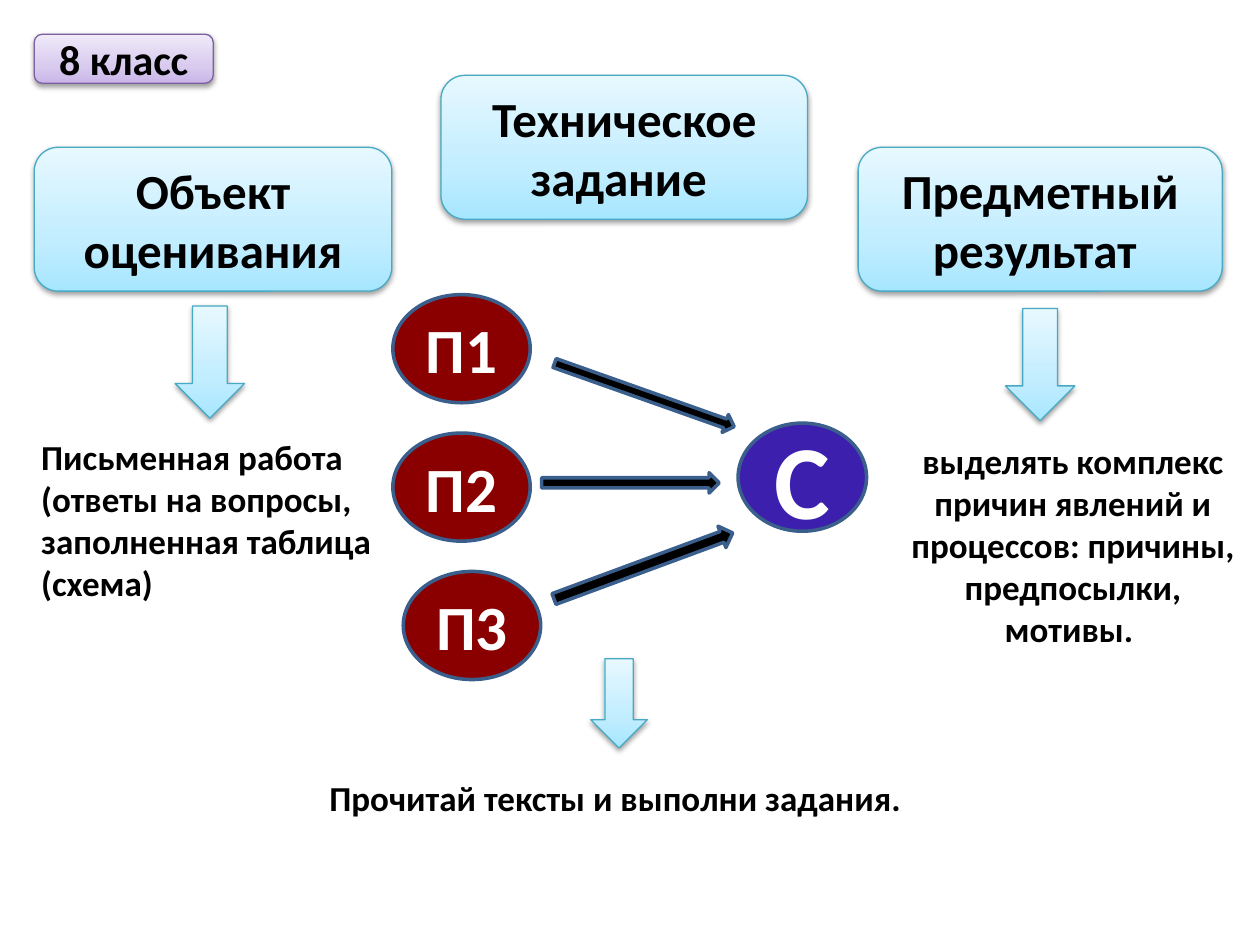
"""Build the slide with the 8th grade assignment scheme."""
from copy import deepcopy

from lxml.etree import SubElement
from pptx import Presentation
from pptx.dml.color import RGBColor
from pptx.enum.shapes import MSO_SHAPE
from pptx.enum.text import MSO_ANCHOR, PP_ALIGN
from pptx.oxml.ns import qn
from pptx.util import Cm, Pt

BLACK = RGBColor(0x00, 0x00, 0x00)
WHITE = RGBColor(0xFF, 0xFF, 0xFF)
DARK_RED = RGBColor(0x8A, 0x00, 0x00)
INDIGO = RGBColor(0x3D, 0x1F, 0xAD)
STEEL = RGBColor(0x3A, 0x5F, 0x8C)
AQUA_LINE = RGBColor(0x46, 0xAA, 0xC5)
PURPLE_LINE = RGBColor(0x7D, 0x60, 0xA0)
AQUA = [RGBColor(0xA7, 0xE6, 0xFF), RGBColor(0xC1, 0xED, 0xFF), RGBColor(0xE7, 0xF8, 0xFF)]
PURPLE = [RGBColor(0xC9, 0xB5, 0xE8), RGBColor(0xD8, 0xCB, 0xEE), RGBColor(0xF0, 0xEA, 0xF9)]
STOPS = (0, 0.35, 1)

HEADINGS = [
    ("Объект оценивания", (0.69, 2.97, 7.21, 2.9), 28, AQUA, AQUA_LINE),
    ("Техническое задание ", (8.89, 1.52, 7.39, 2.9), 28, AQUA, AQUA_LINE),
    ("Предметный результат ", (17.3, 2.97, 7.34, 2.9), 28, AQUA, AQUA_LINE),
    ("8 класс", (0.69, 0.69, 3.61, 0.99), 24, PURPLE, PURPLE_LINE),
]
DOWN_ARROWS = [
    (3.53, 6.17, 1.4, 2.26),
    (20.27, 6.22, 1.4, 2.26),
    (11.91, 13.28, 1.14, 1.8),
]
NOTES = [
    ("Письменная работа (ответы на вопросы, заполненная таблица (схема)",
     (0.58, 7.92, 7.77, 4.37), PP_ALIGN.LEFT, MSO_ANCHOR.BOTTOM, 4),
    ("Прочитай тексты и выполни задания.",
     (1.19, 15.52, 22.43, 2.72), PP_ALIGN.CENTER, MSO_ANCHOR.TOP, 4),
    ("выделять комплекс причин явлений и процессов: причины, предпосылки, мотивы. ",
     (17.86, 8.74, 7.54, 4.52), PP_ALIGN.CENTER, MSO_ANCHOR.TOP, 0),
]
CAUSES = [("П1", 7.92), ("П2", 7.92), ("П3", 8.13)]
CAUSE_TOP, CAUSE_STEP = 5.94, 2.79
CAUSE_SIZE = (2.77, 2.18)
EFFECT = ("С", (14.88, 8.53, 2.59, 2.18))
LINKS = [
    ((10.92, 9.53, 3.58, 0.41), 0),
    ((11.07, 7.77, 3.84, 0.38), 19.5),
    ((11.05, 11.18, 3.84, 0.46), -20.3),
]


def write(shape, text, size, color, align=PP_ALIGN.CENTER,
          anchor=MSO_ANCHOR.MIDDLE, before=0, wrap=True):
    frame = shape.text_frame
    frame.word_wrap = wrap
    frame.vertical_anchor = anchor
    paragraph = frame.paragraphs[0]
    paragraph.alignment = align
    paragraph.space_before = Pt(before)
    run = paragraph.add_run()
    run.text = text
    run.font.name = "Calibri"
    run.font.size = Pt(size)
    run.font.bold = True
    run.font.color.rgb = color


def add_outlined(slide, preset, box, line_color, line_width):
    shape = slide.shapes.add_shape(preset, *map(Cm, box))
    shape.shadow.inherit = False
    shape.line.color.rgb = line_color
    shape.line.width = Pt(line_width)
    return shape


def add_flat(slide, preset, box, color):
    shape = add_outlined(slide, preset, box, STEEL, 2)
    shape.fill.solid()
    shape.fill.fore_color.rgb = color
    return shape


def add_glossy(slide, preset, box, colors, line_color):
    shape = add_outlined(slide, preset, box, line_color, 0.75)
    shape.fill.gradient()
    shape.fill.gradient_angle = 90
    properties = shape._element.spPr
    stop_list = properties.find(qn("a:gradFill")).find(qn("a:gsLst"))
    stop_list.append(deepcopy(stop_list[0]))
    for stop, color, position in zip(shape.fill.gradient_stops, colors, STOPS):
        stop.color.rgb = color
        stop.position = position
    shadow = SubElement(properties.find(qn("a:effectLst")), qn("a:outerShdw"),
                        blurRad=str(Pt(3.1)), dist=str(Pt(1.6)),
                        dir="5400000", rotWithShape="0")
    shade = SubElement(shadow, qn("a:srgbClr"), val=str(BLACK))
    SubElement(shade, qn("a:alpha"), val="38000")
    return shape


def main():
    deck = Presentation()
    deck.slide_width, deck.slide_height = Cm(25.4), Cm(19.05)
    slide = deck.slides.add_slide(deck.slide_layouts[6])

    for text, box, size, colors, line_color in HEADINGS:
        heading = add_glossy(slide, MSO_SHAPE.ROUNDED_RECTANGLE, box, colors, line_color)
        write(heading, text, size, BLACK)
    for box in DOWN_ARROWS:
        add_glossy(slide, MSO_SHAPE.DOWN_ARROW, box, AQUA, AQUA_LINE)
    for text, box, align, anchor, before in NOTES:
        note = slide.shapes.add_textbox(*map(Cm, box))
        write(note, text, 20, BLACK, align, anchor, before)

    text, box = EFFECT
    write(add_flat(slide, MSO_SHAPE.OVAL, box, INDIGO), text, 60, WHITE, wrap=False)
    for row, (text, left) in enumerate(CAUSES):
        box = (left, CAUSE_TOP + row * CAUSE_STEP, *CAUSE_SIZE)
        write(add_flat(slide, MSO_SHAPE.OVAL, box, DARK_RED), text, 36, WHITE, wrap=False)
    for box, angle in LINKS:
        add_flat(slide, MSO_SHAPE.RIGHT_ARROW, box, BLACK).rotation = angle

    deck.save("out.pptx")


if __name__ == "__main__":
    main()
